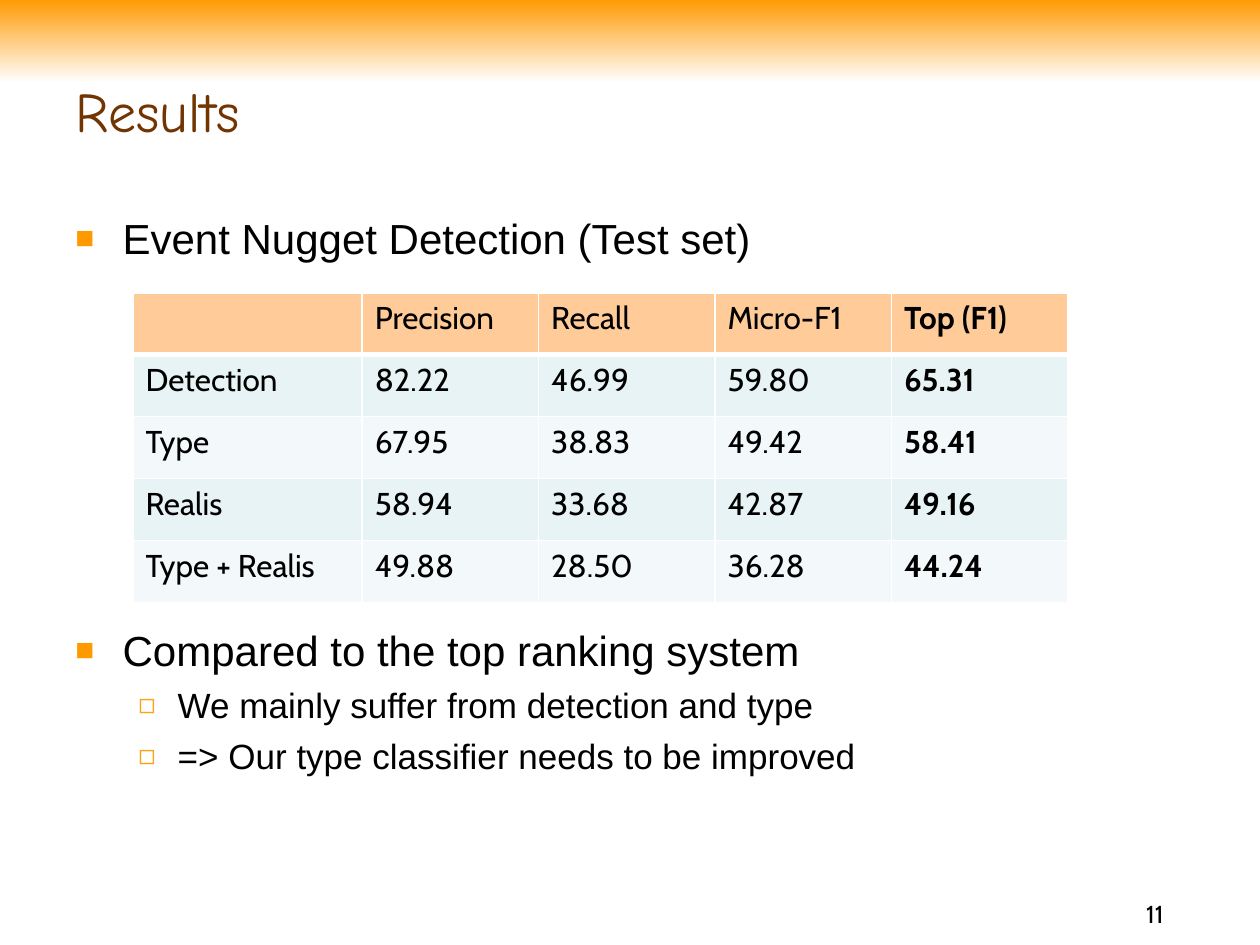
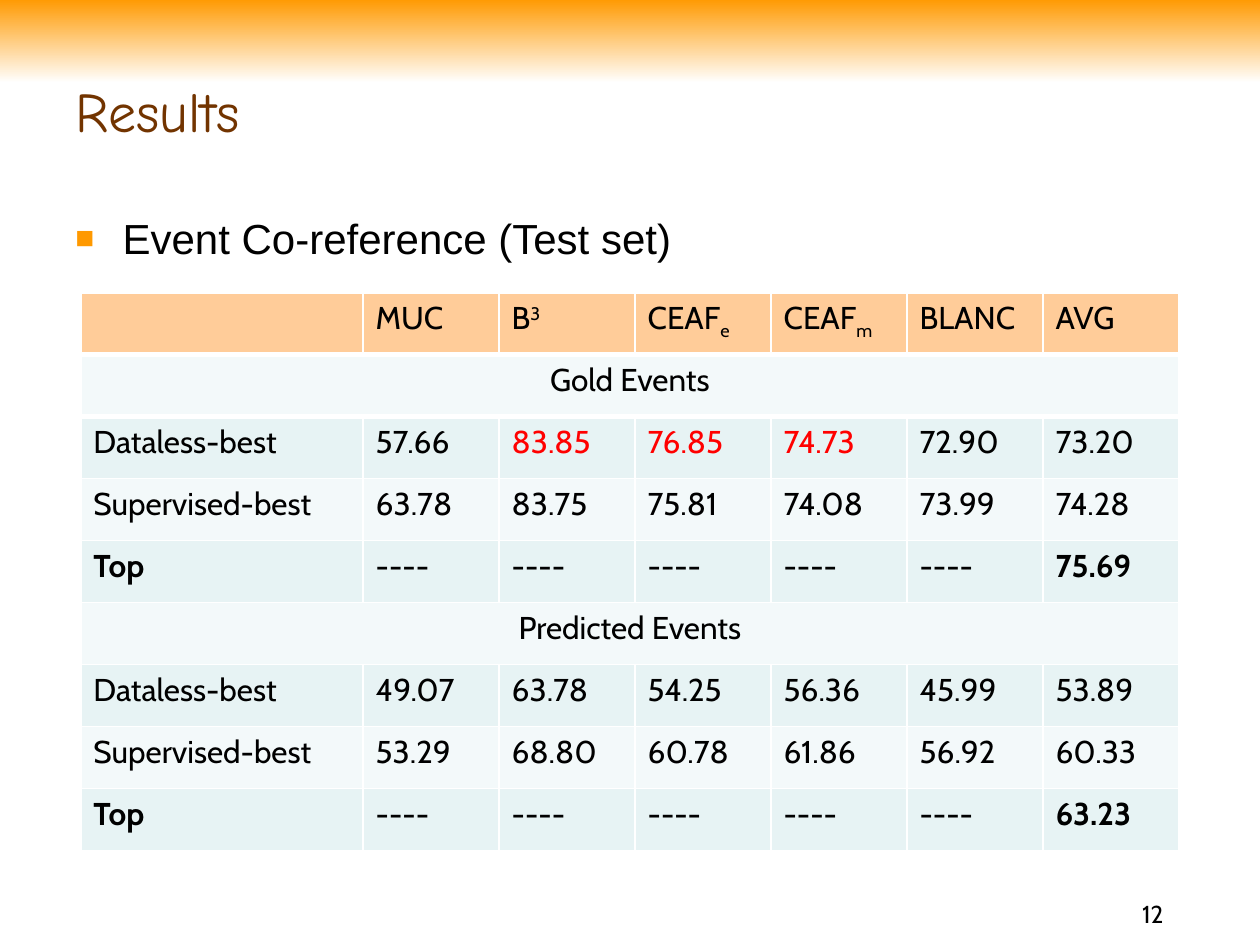
from lxml.etree import SubElement, Element
from pptx import Presentation
from pptx.dml.color import RGBColor
from pptx.enum.shapes import MSO_SHAPE as Preset
from pptx.enum.text import MSO_ANCHOR as Anchor, PP_ALIGN as Align
from pptx.oxml.ns import qn
from pptx.util import Pt

# Shared style
ORANGE, WHITE, BLACK, BROWN, RED = "FF9900", "FFFFFF", "000000", "723400", "FF0000"
HEADER_FILL, DARK_STRIPE, LIGHT_STRIPE = "FFCC99", "E7F3F4", "F3F9FA"
TITLE_FONT, BODY_FONT, TABLE_FONT = "Comic Neue", "Arial", "Cabin"
ROW_HEIGHT, TABLE_TOP, BODY_TOP = 35.43, 167.3, 118
# Per level: text size, left margin, hanging indent, bullet, its colour, its percent
LEVELS = [
    (24, 27, 27, "■", ORANGE, 75),
    (20, 58.5, 22.5, "◻", "FBA313", 80),
]


def rgb(color):
    return RGBColor.from_string(color)


def assign(target, **values):
    for name, value in values.items():
        setattr(target, name, value)


class Deck:
    def __init__(self, width, height):
        self.prs = Presentation()
        assign(self.prs, slide_width=Pt(width), slide_height=Pt(height))
        self.slide = None

    def new_slide(self, title, number):
        self.slide = self.prs.slides.add_slide(self.prs.slide_layouts[6])
        self.band()
        heading = self.text_frame(36, 36, 648, 54, Anchor.MIDDLE)
        self.run(heading.paragraphs[0], title, 32, TITLE_FONT, BROWN)
        footer = self.text_frame(600, 516, 72, 18, Anchor.BOTTOM).paragraphs[0]
        footer.alignment = Align.RIGHT
        self.run(footer, str(number), 14, TABLE_FONT)

    def band(self):
        band = self.slide.shapes.add_shape(
            Preset.RECTANGLE, 0, Pt(-0.7), self.prs.slide_width, Pt(48))
        band.shadow.inherit = False
        band.line.fill.background()
        band.fill.gradient()
        band.fill.gradient_angle = 270
        for stop, color in zip(band.fill.gradient_stops, (ORANGE, WHITE)):
            stop.color.rgb = rgb(color)

    def text_frame(self, left, top, width, height, anchor=Anchor.TOP):
        box = self.slide.shapes.add_textbox(Pt(left), Pt(top), Pt(width), Pt(height))
        assign(box.text_frame, word_wrap=True, vertical_anchor=anchor)
        return box.text_frame

    def run(self, paragraph, text, size, font, color=BLACK, bold=False, baseline=0):
        run = paragraph.add_run()
        run.text = text
        assign(run.font, size=Pt(size), name=font, bold=bold)
        run.font.color.rgb = rgb(color)
        if baseline:
            run.font._element.set("baseline", str(baseline * 1000))

    def bullets(self, top, height, items):
        frame = self.text_frame(36, top, 648, height)
        for i, (level, text) in enumerate(items):
            paragraph = frame.add_paragraph() if i else frame.paragraphs[0]
            size, margin, hanging, mark, color, percent = LEVELS[level]
            paragraph.level = level
            props = paragraph._p.get_or_add_pPr()
            props.set("marL", str(Pt(margin)))
            props.set("indent", str(-Pt(hanging)))
            SubElement(SubElement(props, qn("a:buClr")), qn("a:srgbClr"), val=color)
            SubElement(props, qn("a:buSzPct"), val=str(percent * 1000))
            SubElement(props, qn("a:buFont"), typeface=BODY_FONT)
            SubElement(props, qn("a:buChar"), char=mark)
            if i:
                paragraph.space_before = Pt(5)
            self.run(paragraph, text, size, BODY_FONT)

    def borders(self, cell, above, below):
        props = cell._tc.get_or_add_tcPr()
        widths = {"a:lnL": 1, "a:lnR": 1, "a:lnT": above, "a:lnB": below}
        for i, (side, width) in enumerate(widths.items()):
            line = Element(qn(side), w=str(Pt(width)))
            fill = SubElement(line, qn("a:solidFill"))
            SubElement(fill, qn("a:srgbClr"), val=WHITE)
            props.insert(i, line)

    def table(self, left, widths, rows, stripes, heavy=(1,), bold=(), red=()):
        """heavy: grid lines drawn thick; bold and red: (row, column) pairs.
        A row with one entry spans the table; a tuple adds a raised or lowered part."""
        table = self.slide.shapes.add_table(
            len(rows), len(widths), Pt(left), Pt(TABLE_TOP),
            Pt(sum(widths)), Pt(ROW_HEIGHT * len(rows))).table
        assign(table, first_row=False, horz_banding=False)
        for column, width in zip(table.columns, widths):
            column.width = Pt(width)
        for r, row in enumerate(rows):
            table.rows[r].height = Pt(ROW_HEIGHT)
            for c in range(len(widths)):
                cell = table.cell(r, c)
                cell.fill.solid()
                cell.fill.fore_color.rgb = rgb(stripes[r % 2] if r else HEADER_FILL)
                self.borders(cell, *(3 if edge in heavy else 1 for edge in (r, r + 1)))
            if len(row) == 1:
                table.cell(r, 0).merge(table.cell(r, len(widths) - 1))
                table.cell(r, 0).text_frame.paragraphs[0].alignment = Align.CENTER
            for c, entry in enumerate(row):
                paragraph = table.cell(r, c).text_frame.paragraphs[0]
                text, script, baseline = entry if isinstance(entry, tuple) else (entry, "", 0)
                color = RED if (r, c) in red else BLACK
                for part, shift in ((text, 0), (script, baseline)):
                    if part:
                        self.run(paragraph, part, 18, TABLE_FONT, color, (r, c) in bold, shift)


def main():
    deck = Deck(720, 540)

    # Event nugget detection
    deck.new_slide("Results", 11)
    deck.bullets(BODY_TOP, 40, [(0, "Event Nugget Detection (Test set)")])
    detection = [
        ["", "Precision", "Recall", "Micro-F1", "Top (F1)"],
        ["Detection", "82.22", "46.99", "59.80", "65.31"],
        ["Type", "67.95", "38.83", "49.42", "58.41"],
        ["Realis", "58.94", "33.68", "42.87", "49.16"],
        ["Type + Realis", "49.88", "28.50", "36.28", "44.24"],
    ]
    deck.table(76, [131] + [100.8] * 4, detection, (LIGHT_STRIPE, DARK_STRIPE),
               bold=[(r, 4) for r in range(len(detection))])
    deck.bullets(353.4, 126, [
        (0, "Compared to the top ranking system"),
        (1, "We mainly suffer from detection and type"),
        (1, "=> Our type classifier needs to be improved"),
    ])

    # Event co-reference
    deck.new_slide("Results", 12)
    deck.bullets(BODY_TOP, 40, [(0, "Event Co-reference (Test set)")])
    no_scores = ["----"] * 5
    coreference = [
        ["", "MUC", ("B", "3", 30), ("CEAF", "e", -25), ("CEAF", "m", -25), "BLANC", "AVG"],
        ["Gold Events"],
        ["Dataless-best", "57.66", "83.85", "76.85", "74.73", "72.90", "73.20"],
        ["Supervised-best", "63.78", "83.75", "75.81", "74.08", "73.99", "74.28"],
        ["Top", *no_scores, "75.69"],
        ["Predicted Events"],
        ["Dataless-best", "49.07", "63.78", "54.25", "56.36", "45.99", "53.89"],
        ["Supervised-best", "53.29", "68.80", "60.78", "61.86", "56.92", "60.33"],
        ["Top", *no_scores, "63.23"],
    ]
    deck.table(46.2, [161.3] + [77.7] * 6, coreference, (DARK_STRIPE, LIGHT_STRIPE),
               heavy=(1, 2), bold=[(r, c) for r in (4, 8) for c in (0, 6)],
               red=[(2, c) for c in (2, 3, 4)])

    deck.prs.save("out.pptx")


if __name__ == "__main__":
    main()
